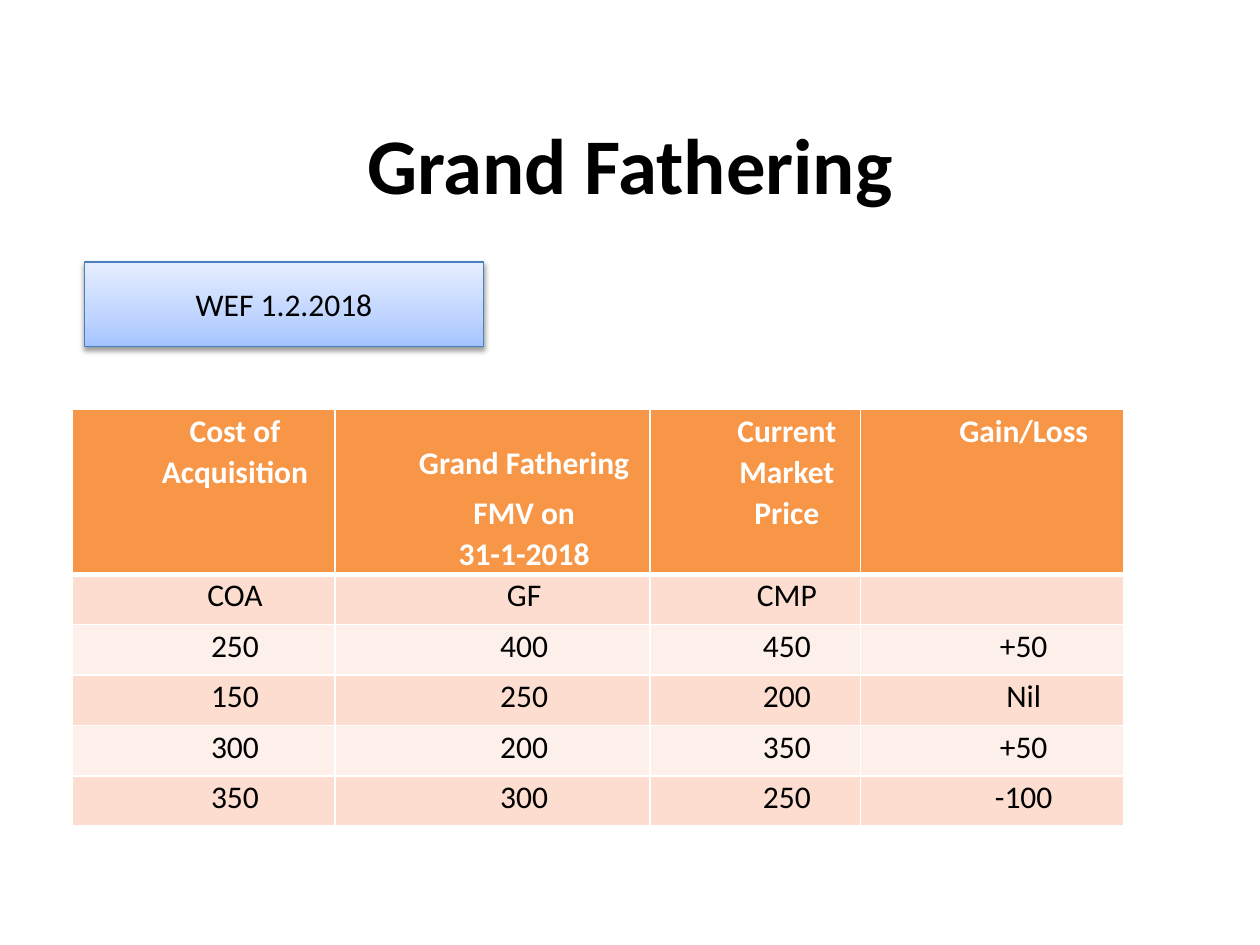
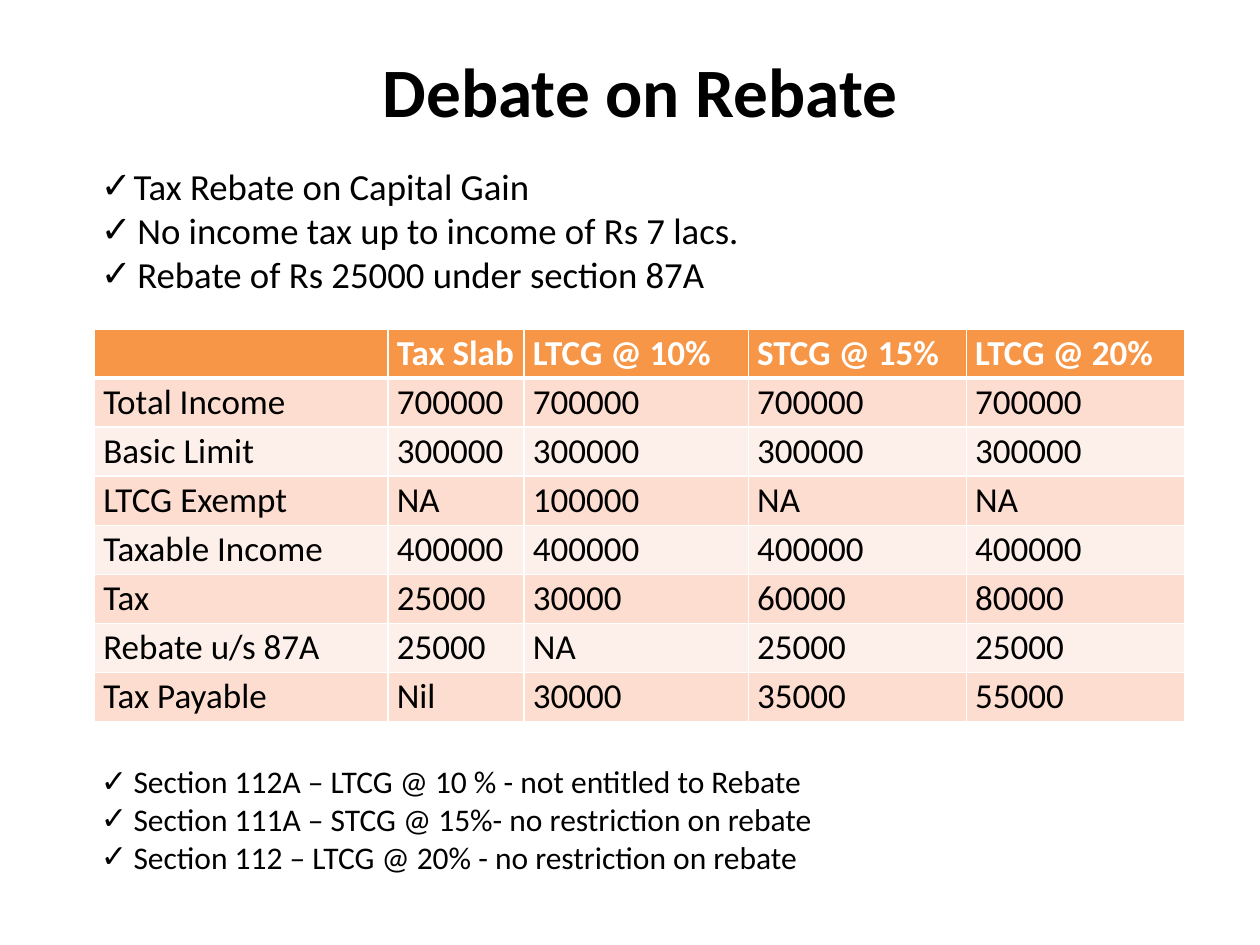
from copy import deepcopy
from lxml import etree
from pptx import Presentation
from pptx.dml.color import RGBColor
from pptx.enum.shapes import MSO_SHAPE as Shape
from pptx.enum.text import MSO_ANCHOR as Anchor, MSO_AUTO_SIZE as Auto, PP_ALIGN as Align
from pptx.oxml.ns import qn
from pptx.util import Inches, Pt

# Shared look
FONT = "Calibri"
BLACK, WHITE = "000000", "FFFFFF"
HEAD, BANDS = "F79646", ("FCDDCF", "FDEFE9")

# Slide 1 content
GAIN = {
    "at": (0.57, 3.25), "cols": (2.09, 2.5, 1.67, 2.09), "rows": (1.24, 0.4),
    "size": 18, "align": Align.CENTER, "left": 0.5,
    "cells": [
        ("Cost of Acquisition", "Grand Fathering\n31-1-2018",
         "Current Market Price", "Gain/Loss"),
        ("COA", "GF", "CMP", ""),
        ("250", "400", "450", "+50"),
        ("150", "250", "200", "Nil"),
        ("300", "200", "350", "+50"),
        ("350", "300", "250", "-100"),
    ],
}
DATE = "WEF 1.2.2018"
STOPS = ((0, "A4C4FF"), (0.35, "BFD4FF"), (1, "E6EEFF"))

# Slide 2 content
TAX = {
    "at": (0.75, 2.61), "cols": (2.33, 1.08, 1.78, 1.73, 1.73), "rows": (0.39, 0.39),
    "size": 20, "align": Align.LEFT, "left": 0,
    "cells": [
        ("", "Tax Slab", "LTCG @ 10%", "STCG @ 15%", "LTCG @ 20%"),
        ("Total Income",) + ("700000",) * 4,
        ("Basic Limit",) + ("300000",) * 4,
        ("LTCG Exempt", "NA", "100000", "NA", "NA"),
        ("Taxable Income",) + ("400000",) * 4,
        ("Tax", "25000", "30000", "60000", "80000"),
        ("Rebate u/s 87A", "25000", "NA", "25000", "25000"),
        ("Tax Payable", "Nil", "30000", "35000", "55000"),
    ],
}
# Each list: box, text size, items as (text, tick size, indent)
LISTS = [
    ((0.7, 1.25, 7.63, 1.16), 21, [
        ("Tax Rebate on Capital Gain", 18, 0.26),
        ("No income tax up to income of Rs 7 lacs.", 21, 0.29),
        ("Rebate of Rs 25000 under section 87A", 21, 0.29)]),
    ((0.7, 6, 8.91, 1.01), 18, [
        ("Section 112A – LTCG @ 10 % - not entitled to Rebate", 18, 0.26),
        ("Section 111A – STCG @ 15%- no restriction on rebate", 18, 0.26),
        ("Section 112 – LTCG @ 20% - no restriction on rebate", 18, 0.26)]),
]


def paint(code):
    return RGBColor.from_string(code)


def style(para, size, color=BLACK, bold=False):
    for run in para.runs:
        font = run.font
        font.name, font.size, font.bold = FONT, Pt(size), bold
        font.color.rgb = paint(color)


def place(shape, box):
    shape.left, shape.top, shape.width, shape.height = map(Inches, box)
    shape.text_frame.auto_size = Auto.NONE


def add_title(slide, text, box, size):
    title = slide.shapes.title
    place(title, box)
    title.text_frame.text = text
    title.text_frame.vertical_anchor = Anchor.MIDDLE
    para = title.text_frame.paragraphs[0]
    para.alignment = Align.CENTER
    style(para, size, bold=True)


def edge(cell, top, base):
    props = cell._tc.get_or_add_tcPr()
    sides = (("lnL", 1), ("lnR", 1), ("lnT", top), ("lnB", base))
    for spot, (side, width) in enumerate(sides):
        line = etree.Element(qn("a:" + side), w=str(Pt(width)))
        fill = etree.SubElement(line, qn("a:solidFill"))
        etree.SubElement(fill, qn("a:srgbClr"), val=WHITE)
        props.insert(spot, line)


def add_grid(slide, data):
    cells, cols = data["cells"], data["cols"]
    first, rest = data["rows"]
    highs = [first] + [rest] * (len(cells) - 1)
    table = slide.shapes.add_table(
        len(cells), len(cols), *map(Inches, (*data["at"], sum(cols), sum(highs)))).table
    for col, width in zip(table.columns, cols):
        col.width = Inches(width)
    for row, high in enumerate(highs):
        table.rows[row].height = Inches(high)
        for col, text in enumerate(cells[row]):
            cell = table.cell(row, col)
            cell.margin_left = cell.margin_right = Inches(0.07)
            cell.margin_top = cell.margin_bottom = 0
            cell.fill.solid()
            cell.fill.fore_color.rgb = paint(BANDS[(row - 1) % 2] if row else HEAD)
            edge(cell, 3 if row == 1 else 1, 1 if row else 3)
            cell.text_frame.text = text
            for para in cell.text_frame.paragraphs:
                para.alignment, para.line_spacing = data["align"], 1.07
                para._p.get_or_add_pPr().set("marL", str(Inches(data["left"])))
                style(para, data["size"], BLACK if row else WHITE, not row)
    return table


def add_list(body, box, size, items):
    place(body, box)
    frame = body.text_frame
    frame.text = "\n".join(item[0] for item in items)
    for para, (_, tick, gap) in zip(frame.paragraphs, items):
        para.space_before = Pt(0)
        props = para._p.get_or_add_pPr()
        props.set("marL", str(Inches(gap)))
        props.set("indent", str(-Inches(gap)))
        etree.SubElement(props, qn("a:buSzPts"), val=str(tick * 100))
        etree.SubElement(props, qn("a:buChar"), char="✓")
        style(para, size)


def add_badge(slide, text, box):
    badge = slide.shapes.add_shape(Shape.RECTANGLE, *map(Inches, box))
    badge.line.color.rgb, badge.line.width = paint("4B7EBC"), Pt(0.75)
    # Three-stop gradient, light at the top
    badge.fill.gradient()
    badge.fill.gradient_angle = 90
    stops = badge._element.spPr.find(".//" + qn("a:gsLst"))
    stops.append(deepcopy(stops[0]))
    for stop, (spot, code) in zip(badge.fill.gradient_stops, STOPS):
        stop.position, stop.color.rgb = spot, paint(code)
    # Soft shadow below
    badge.shadow.inherit = False
    shade = etree.SubElement(
        badge._element.spPr.find(qn("a:effectLst")), qn("a:outerShdw"),
        blurRad=str(Pt(3.1)), dist=str(Pt(1.6)), dir="5400000", rotWithShape="0")
    tone = etree.SubElement(shade, qn("a:srgbClr"), val=BLACK)
    etree.SubElement(tone, qn("a:alpha"), val="38000")
    badge.text_frame.text = text
    badge.text_frame.vertical_anchor = Anchor.MIDDLE
    para = badge.text_frame.paragraphs[0]
    para.alignment = Align.CENTER
    style(para, 18)


def main():
    deck = Presentation()
    deck.slide_width, deck.slide_height = Inches(10), Inches(7.5)
    plain, double = deck.slide_layouts[5], deck.slide_layouts[3]

    # Grand Fathering
    slide = deck.slides.add_slide(plain)
    add_title(slide, "Grand Fathering", (0.5, 0.42, 9, 1.75), 45)
    table = add_grid(slide, GAIN)
    para = table.cell(0, 1).text_frame.paragraphs[0]
    for text in (" ", "FMV on"):
        para.add_run().text = text
    style(para, GAIN["size"], WHITE, True)
    para.runs[1].font.size = Pt(36)  # tall space opens up the first line
    add_badge(slide, DATE, (0.67, 2.08, 3.17, 0.67))

    # Debate on Rebate
    slide = deck.slides.add_slide(double)
    add_title(slide, "Debate on Rebate", (0.58, 0.17, 9, 1.08), 39.6)
    for spot, (box, size, items) in enumerate(LISTS, 1):
        add_list(slide.placeholders[spot], box, size, items)
    add_grid(slide, TAX)

    deck.save("out.pptx")


if __name__ == "__main__":
    main()
